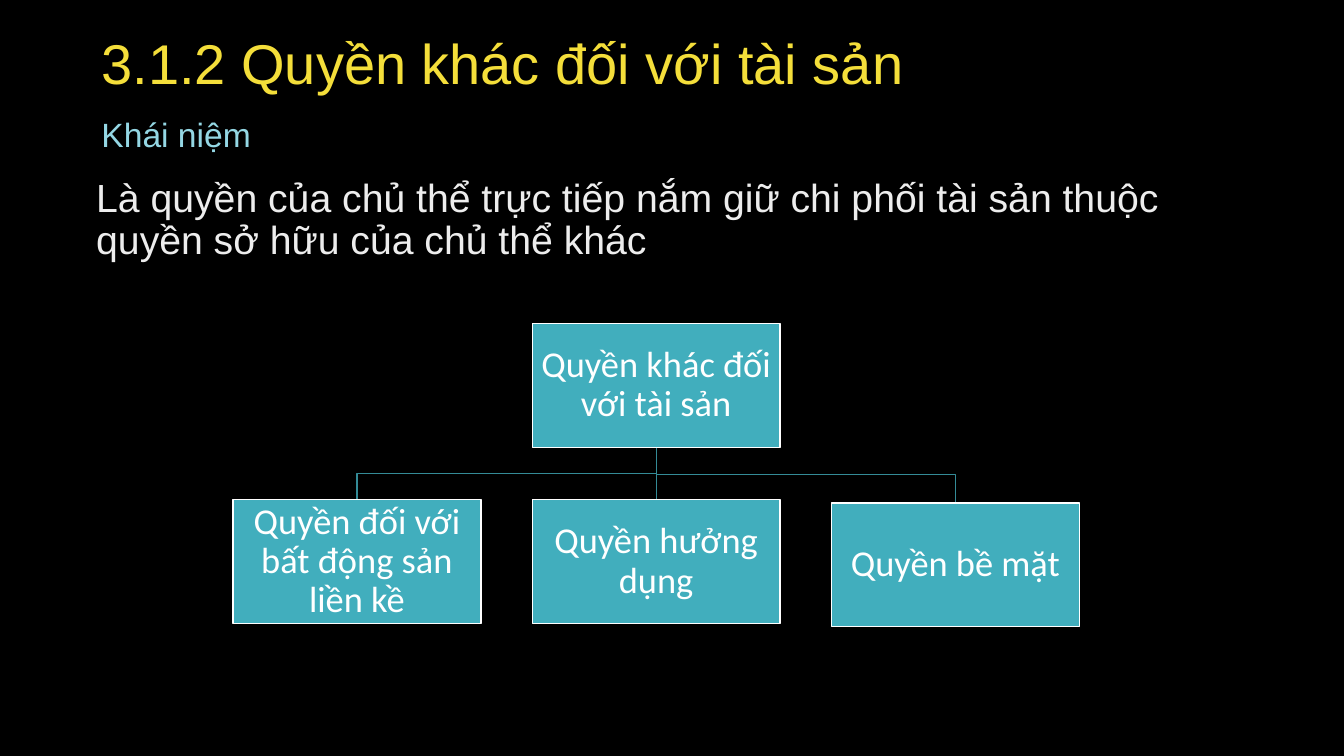
from lxml import etree
from pptx import Presentation
from pptx.dml.color import RGBColor
from pptx.enum.shapes import MSO_CONNECTOR, MSO_SHAPE
from pptx.enum.text import MSO_ANCHOR, MSO_AUTO_SIZE, PP_ALIGN
from pptx.oxml.ns import qn
from pptx.util import Emu, Pt

RECTANGLE = MSO_SHAPE.RECTANGLE
STRAIGHT = MSO_CONNECTOR.STRAIGHT
TOP, MIDDLE, BOTTOM = MSO_ANCHOR.TOP, MSO_ANCHOR.MIDDLE, MSO_ANCHOR.BOTTOM
NO_AUTOFIT = MSO_AUTO_SIZE.NONE
LEFT, CENTER = PP_ALIGN.LEFT, PP_ALIGN.CENTER

SLIDE_WIDTH, SLIDE_HEIGHT = 1280, 720
COMPARISON_LAYOUT = 4
COLORS = {
    "background": "000000",
    "title": "F4DE3A",
    "subtitle": "94D7E4",
    "definition": "EDEDED",
    "box": "41AEBD",
    "box_text": "FFFFFF",
    "branch": "348B97",
}


def px(value):
    return Emu(value * 9525)


def apply(target, values):
    for name, value in values.items():
        setattr(target, name, value)


class RightsSlide:
    def __init__(self, presentation):
        layout = presentation.slide_layouts[COMPARISON_LAYOUT]
        self.slide = presentation.slides.add_slide(layout)
        self.shapes = self.slide.shapes
        fill = self.slide.background.fill
        fill.solid()
        fill.fore_color.rgb = self.color("background")

    def color(self, role):
        return RGBColor.from_string(COLORS[role])

    def place(self, shape, left, top, width, height):
        apply(shape, {"left": px(left), "top": px(top),
                      "width": px(width), "height": px(height)})

    def set_text(self, shape, text, role, size, font, anchor, alignment):
        frame = shape.text_frame
        frame.text = text
        apply(frame, {"word_wrap": True, "auto_size": NO_AUTOFIT,
                      "vertical_anchor": anchor})
        paragraph = frame.paragraphs[0]
        apply(paragraph, {"alignment": alignment, "line_spacing": 0.9,
                          "space_before": Pt(0)})
        apply(paragraph.font, {"name": font, "size": Pt(size), "bold": False})
        paragraph.font.color.rgb = self.color(role)

    def heading(self, index, text, role, size, anchor, bounds):
        placeholder = self.slide.placeholders[index]
        self.place(placeholder, *bounds)
        self.set_text(placeholder, text, role, size, "Arial", anchor, LEFT)

    def outline(self, shape, role):
        shape.line.color.rgb = self.color(role)
        shape.line.width = Pt(1)

    def box(self, text, left, top, width, height):
        box = self.shapes.add_shape(
            RECTANGLE, px(left), px(top), px(width), px(height))
        box.shadow.inherit = False
        box.fill.solid()
        box.fill.fore_color.rgb = self.color("box")
        self.outline(box, "box_text")
        apply(box.text_frame, dict.fromkeys(
            ("margin_left", "margin_top", "margin_right", "margin_bottom"), px(2)))
        self.set_text(box, text, "box_text", 26, "Calibri", MIDDLE, CENTER)

    def branch(self, start_x, start_y, end_x, end_y):
        if start_x == end_x:
            branch = self.shapes.add_connector(
                STRAIGHT, px(start_x), px(start_y), px(end_x), px(end_y))
            etree.SubElement(branch._element.spPr, qn("a:effectLst"))
        else:
            bend_y = (start_y + end_y) // 2
            builder = self.shapes.build_freeform(start_x, start_y, scale=px(1))
            builder.add_line_segments(
                [(start_x, bend_y), (end_x, bend_y), (end_x, end_y)], close=False)
            branch = builder.convert_to_shape()
            branch.shadow.inherit = False
            branch.fill.background()
        self.outline(branch, "branch")

    def tree(self, root, children, left, top, width, height, step):
        root_left = left + step
        center = root_left + width // 2
        for column, (text, child_top) in enumerate(children):
            child_left = left + column * step
            self.branch(center, top + height, child_left + width // 2, child_top)
            self.box(text, child_left, child_top, width, height)
        self.box(root, root_left, top, width, height)

    def remove_empty_placeholders(self):
        for placeholder in list(self.slide.placeholders):
            if not placeholder.text_frame.text:
                self.shapes._spTree.remove(placeholder._element)


def main():
    presentation = Presentation()
    apply(presentation, {"slide_width": px(SLIDE_WIDTH),
                         "slide_height": px(SLIDE_HEIGHT)})
    rights = RightsSlide(presentation)
    rights.heading(0, "3.1.2 Quyền khác đối với tài sản", "title", 40,
                   MIDDLE, (87, 23, 1095, 80))
    rights.heading(1, "Khái niệm", "subtitle", 24, BOTTOM, (87, 95, 527, 57))
    rights.heading(
        3,
        "Là quyền của chủ thể trực tiếp nắm giữ chi phối tài sản thuộc "
        "quyền sở hữu của chủ thể khác",
        "definition", 28, TOP, (82, 165, 1121, 117))
    rights.remove_empty_placeholders()
    rights.tree(
        "Quyền khác đối với tài sản",
        [("Quyền đối với bất động sản liền kề", 476),
         ("Quyền hưởng dụng", 476),
         ("Quyền bề mặt", 479)],
        left=222, top=308, width=236, height=118, step=285)
    presentation.save("out.pptx")


if __name__ == "__main__":
    main()
